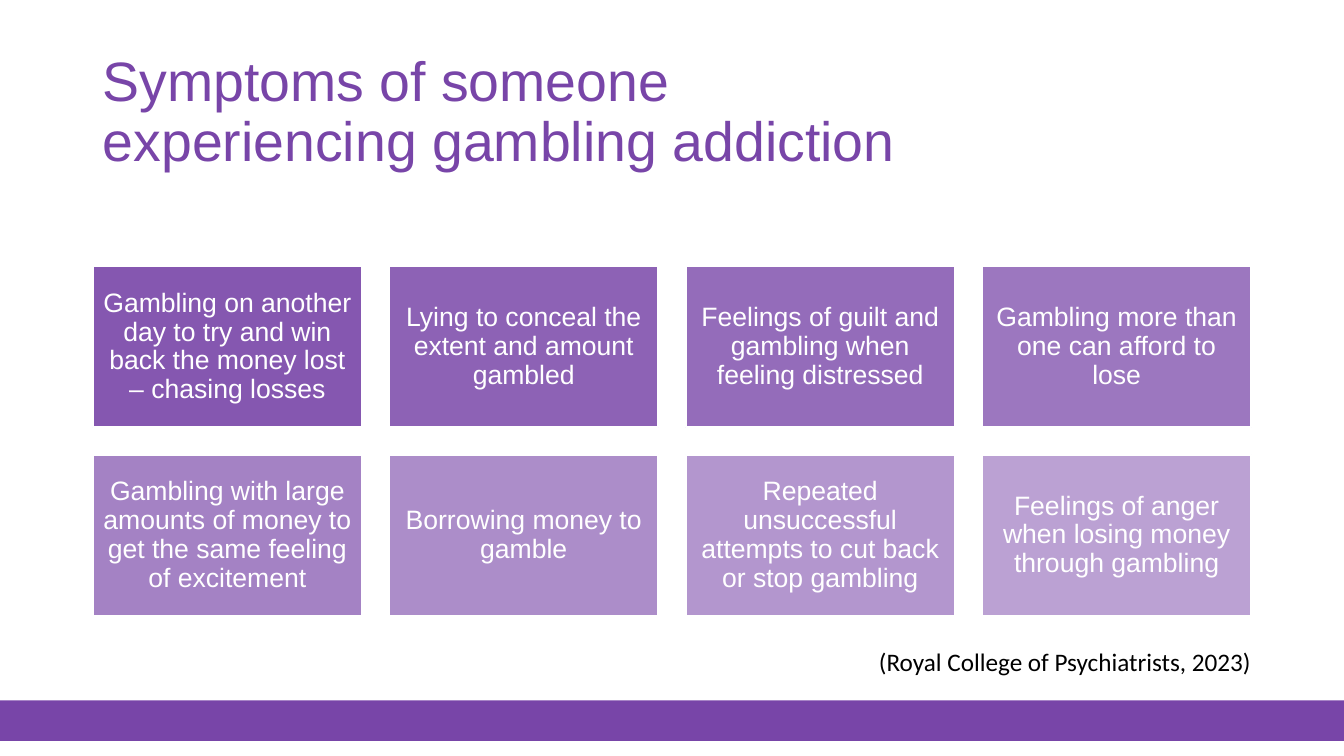
"""Builds a slide listing the symptoms of gambling addiction as a grid of fading tiles."""
from dataclasses import dataclass

from lxml.etree import SubElement
from pptx import Presentation
from pptx.dml.color import RGBColor as Rgb
from pptx.enum.shapes import MSO_SHAPE as Preset
from pptx.enum.text import MSO_ANCHOR as Anchor, PP_ALIGN as Align
from pptx.oxml.ns import qn
from pptx.util import Cm, Pt

TITLE = "Symptoms of someone experiencing gambling addiction"
SYMPTOMS = [
    "Gambling on another day to try and win back the money lost – chasing losses",
    "Lying to conceal the extent and amount gambled",
    "Feelings of guilt and gambling when feeling distressed",
    "Gambling more than one can afford to lose",
    "Gambling with large amounts of money to get the same feeling of excitement",
    "Borrowing money to gamble",
    "Repeated unsuccessful attempts to cut back or stop gambling",
    "Feelings of anger when losing money through gambling",
]
CITATION = "(Royal College of Psychiatrists, 2023)"


@dataclass(frozen=True)
class Theme:
    purple: Rgb = Rgb(0x78, 0x45, 0xA8)
    white: Rgb = Rgb(0xFF, 0xFF, 0xFF)
    black: Rgb = Rgb(0, 0, 0)
    heading_font: str = "Arial"
    citation_font: str = "Calibri"
    title_size: float = 39.6
    tile_size: float = 19
    citation_size: float = 18
    tile_border: float = 1.5
    first_opacity: int = 90
    last_opacity: int = 50


THEME = Theme()
COLUMNS = 4
GRID_LEFT, GRID_TOP = 2.34, 6.71
TILE_WIDTH, TILE_HEIGHT = 6.78, 4.06
GAP = 0.69
TILE_INSET = 0.2


def write(holder, words, font, size, color, spacing, align=Align.LEFT, anchor=Anchor.TOP):
    frame = holder.text_frame
    frame.word_wrap = True
    frame.vertical_anchor = anchor
    paragraph = frame.paragraphs[0]
    paragraph.alignment = align
    paragraph.line_spacing = spacing
    run = paragraph.add_run()
    run.text = words
    run.font.name = font
    run.font.size = Pt(size)
    run.font.color.rgb = color
    return frame


def add_block(slide, left, top, width, height, opacity=100):
    block = slide.shapes.add_shape(Preset.RECTANGLE, Cm(left), Cm(top), Cm(width), Cm(height))
    block.shadow.inherit = False
    block.fill.solid()
    block.fill.fore_color.rgb = THEME.purple
    block.line.fill.background()
    if opacity < 100:
        tint = block.fill._xPr.find(qn("a:solidFill"))[0]
        SubElement(tint, qn("a:alpha"), val=str(round(opacity * 1000)))
    return block


def add_tile(slide, index, symptom):
    row, column = divmod(index, COLUMNS)
    fade = (THEME.first_opacity - THEME.last_opacity) / (len(SYMPTOMS) - 1)
    tile = add_block(
        slide,
        GRID_LEFT + column * (TILE_WIDTH + GAP),
        GRID_TOP + row * (TILE_HEIGHT + GAP),
        TILE_WIDTH,
        TILE_HEIGHT,
        THEME.first_opacity - index * fade,
    )
    tile.line.color.rgb = THEME.white
    tile.line.width = Pt(THEME.tile_border)
    frame = write(tile, symptom, THEME.heading_font, THEME.tile_size, THEME.white,
                  0.9, Align.CENTER, Anchor.MIDDLE)
    frame.margin_left = frame.margin_right = Cm(TILE_INSET)
    frame.margin_top = frame.margin_bottom = Cm(TILE_INSET)


def main():
    deck = Presentation()
    deck.slide_width, deck.slide_height = Cm(33.87), Cm(19.05)
    slide = deck.slides.add_slide(deck.slide_layouts[6])

    add_block(slide, 0, 17.65, 33.87, 1.02)
    title = slide.shapes.add_textbox(Cm(GRID_LEFT), Cm(1.02), Cm(22.68), Cm(3.68))
    write(title, TITLE, THEME.heading_font, THEME.title_size, THEME.purple,
          0.9, anchor=Anchor.MIDDLE)

    for index, symptom in enumerate(SYMPTOMS):
        add_tile(slide, index, symptom)

    citation = slide.shapes.add_textbox(Cm(21.9), Cm(16.1), Cm(10.19), Cm(1.04))
    write(citation, CITATION, THEME.citation_font, THEME.citation_size, THEME.black, 1.07)

    deck.save("out.pptx")


if __name__ == "__main__":
    main()
